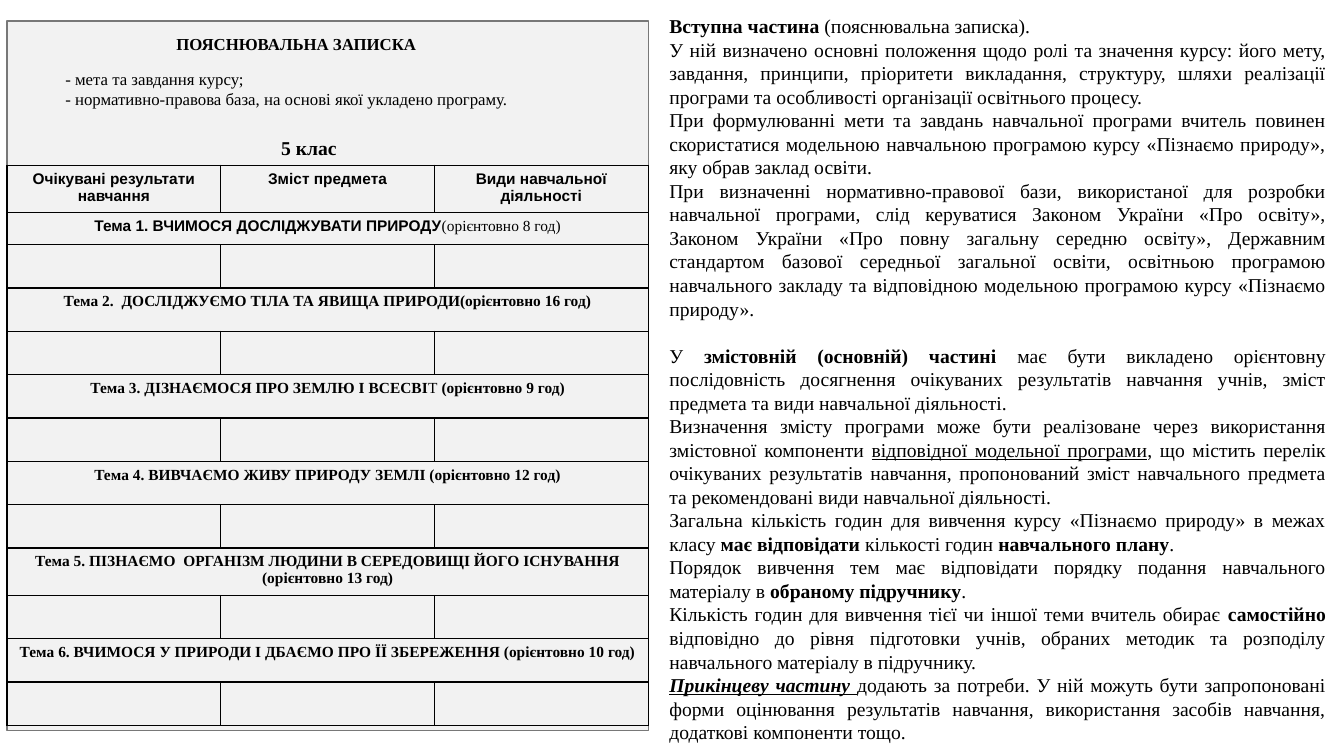
from lxml import etree
from pptx import Presentation, util as u
from pptx.dml.color import RGBColor
from pptx.enum import shapes, text
from pptx.oxml.ns import qn

SERIF, SANS = "Times New Roman", "Arial"
BLACK, SHEET_GREY, FRAME_GREY = "000000", "F2F2F2", "787878"
SHEET_LEFT, SHEET_WIDTH = 0.07, 6.36
BOLD = {"bold": True}
UNDERLINED = {"underline": True}


def write(paragraph, runs, size, face=SERIF, align=text.PP_ALIGN.LEFT, **style):
    """Add runs, each a string or a (string, font attributes) pair."""
    paragraph.alignment = align
    for run_text in runs:
        words, extra = (run_text, {}) if isinstance(run_text, str) else run_text
        run = paragraph.add_run()
        run.text = words
        font = run.font
        font.size = u.Pt(size)
        font.color.rgb = RGBColor.from_string(BLACK)
        for name, value in {"name": face, **style, **extra}.items():
            setattr(font, name, value)


def add_text(slide, box, paragraphs, wrap=True, **style):
    shape = slide.shapes.add_textbox(*(u.Inches(length) for length in box))
    frame = shape.text_frame
    frame.word_wrap = wrap
    for index, runs in enumerate(paragraphs):
        paragraph = frame.add_paragraph() if index else frame.paragraphs[0]
        write(paragraph, runs, **style)
    return frame


presentation = Presentation()
presentation.slide_width = u.Inches(13.33)
presentation.slide_height = u.Inches(7.5)
slide = presentation.slides.add_slide(presentation.slide_layouts[6])

# Explanation on the right
explanation = [
    [("Вступна частина", BOLD), " (пояснювальна записка)."],
    ["У ній визначено основні положення щодо ролі та значення курсу: його мету, "
     "завдання, принципи, пріоритети викладання, структуру, шляхи реалізації "
     "програми та особливості організації освітнього процесу."],
    ["При формулюванні мети та завдань навчальної програми вчитель повинен "
     "скористатися модельною навчальною програмою курсу «Пізнаємо природу», "
     "яку обрав заклад освіти."],
    ["При визначенні нормативно-правової бази, використаної для розробки "
     "навчальної програми, слід керуватися Законом України «Про освіту», "
     "Законом України «Про повну загальну середню освіту», Державним "
     "стандартом базової середньої загальної освіти, освітньою програмою "
     "навчального закладу та відповідною модельною програмою курсу «Пізнаємо "
     "природу»."],
    ["У ", ("змістовній (основній) частині", BOLD),
     " має бути викладено орієнтовну послідовність досягнення очікуваних "
     "результатів навчання учнів, зміст предмета та види навчальної діяльності."],
    ["Визначення змісту програми може бути реалізоване через використання "
     "змістовної компоненти ", ("відповідної модельної програми", UNDERLINED),
     ", що містить перелік очікуваних результатів навчання, пропонований зміст "
     "навчального предмета та рекомендовані види навчальної діяльності."],
    ["Загальна кількість годин для вивчення курсу «Пізнаємо природу» в межах класу ",
     ("має відповідати ", BOLD), "кількості годин ", ("навчального плану", BOLD), "."],
    ["Порядок вивчення тем має відповідати порядку подання навчального матеріалу в ",
     ("обраному підручнику", BOLD), "."],
    ["Кількість годин для вивчення тієї чи іншої теми вчитель обирає ",
     ("самостійно", BOLD),
     " відповідно до рівня підготовки учнів, обраних методик та розподілу "
     "навчального матеріалу в підручнику."],
    [("Прикінцеву частину ", {**BOLD, **UNDERLINED, "italic": True}),
     "додають за потреби. У ній можуть бути запропоновані форми оцінювання "
     "результатів навчання, використання засобів навчання, додаткові компоненти тощо."],
]
frame = add_text(slide, (6.54, 0.09, 6.71, 7.4), explanation, size=14,
                 align=text.PP_ALIGN.JUSTIFY)
frame.paragraphs[4].space_before = u.Pt(16.8)

# Programme sheet on the left
sheet = slide.shapes.add_shape(
    shapes.MSO_SHAPE.RECTANGLE, u.Inches(SHEET_LEFT), u.Inches(0.21),
    u.Inches(SHEET_WIDTH), u.Inches(7.04))
sheet.shadow.inherit = False
sheet.fill.solid()
sheet.fill.fore_color.rgb = RGBColor.from_string(SHEET_GREY)
sheet.line.color.rgb = RGBColor.from_string(FRAME_GREY)
sheet.line.width = u.Pt(1)

add_text(slide, (1.65, 0.29, 2.61, 0.3), [["ПОЯСНЮВАЛЬНА ЗАПИСКА"]],
         wrap=False, size=12, bold=True)
add_text(slide, (0.55, 0.63, 4.66, 0.5),
         [["- мета та завдання курсу;"],
          ["- нормативно-правова база, на основі якої укладено програму."]], size=12)
add_text(slide, (2.69, 1.3, 0.76, 0.34), [["5 клас"]], wrap=False, size=14, bold=True)

# Topic table: a heading row, then a topic row and an empty row per topic
headings = ["Очікувані результати навчання", "Зміст предмета", "Види навчальної діяльності"]
topics = [
    [("Тема 1. ВЧИМОСЯ ДОСЛІДЖУВАТИ ПРИРОДУ", {"name": SANS}),
     ("(орієнтовно 8 год)", {"bold": False})],
    ["Тема 2.  ДОСЛІДЖУЄМО ТІЛА ТА ЯВИЩА ПРИРОДИ(орієнтовно 16 год)"],
    ["Тема 3. ДІЗНАЄМОСЯ ПРО ЗЕМЛЮ І ВСЕСВІ", ("Т ", {"bold": False}),
     "(орієнтовно 9 год)"],
    ["Тема 4. ВИВЧАЄМО ЖИВУ ПРИРОДУ ЗЕМЛІ (орієнтовно 12 год)"],
    ["Тема 5. ПІЗНАЄМО  ОРГАНІЗМ ЛЮДИНИ В СЕРЕДОВИЩІ ЙОГО ІСНУВАННЯ (орієнтовно 13 год)"],
    ["Тема 6. ВЧИМОСЯ У ПРИРОДИ І ДБАЄМО ПРО ЇЇ ЗБЕРЕЖЕННЯ (орієнтовно 10 год)"],
]
special_heights = {0: 0.46, 1: 0.32, 9: 0.47}
row_count = 1 + 2 * len(topics)
table = slide.shapes.add_table(
    row_count, len(headings), u.Inches(SHEET_LEFT), u.Inches(1.64),
    u.Inches(SHEET_WIDTH), u.Inches(5.56)).table
table.first_row = table.horz_banding = False
for index, row in enumerate(table.rows):
    row.height = u.Inches(special_heights.get(index, 0.43))

for cell in table.iter_cells():
    properties = cell._tc.get_or_add_tcPr()
    for side in ("a:lnL", "a:lnR", "a:lnT", "a:lnB"):
        border = etree.SubElement(properties, qn(side), w=str(u.Pt(1)))
        fill = etree.SubElement(border, qn("a:solidFill"))
        etree.SubElement(fill, qn("a:srgbClr"), val=BLACK)
    cell.fill.background()

centred = {"size": 11, "align": text.PP_ALIGN.CENTER, "bold": True}
for column, heading in enumerate(headings):
    write(table.cell(0, column).text_frame.paragraphs[0], [heading], face=SANS, **centred)
for index, topic in enumerate(topics):
    row = 1 + 2 * index
    topic_cell = table.cell(row, 0)
    topic_cell.merge(table.cell(row, len(headings) - 1))
    write(topic_cell.text_frame.paragraphs[0], topic, **centred)

presentation.save("out.pptx")
